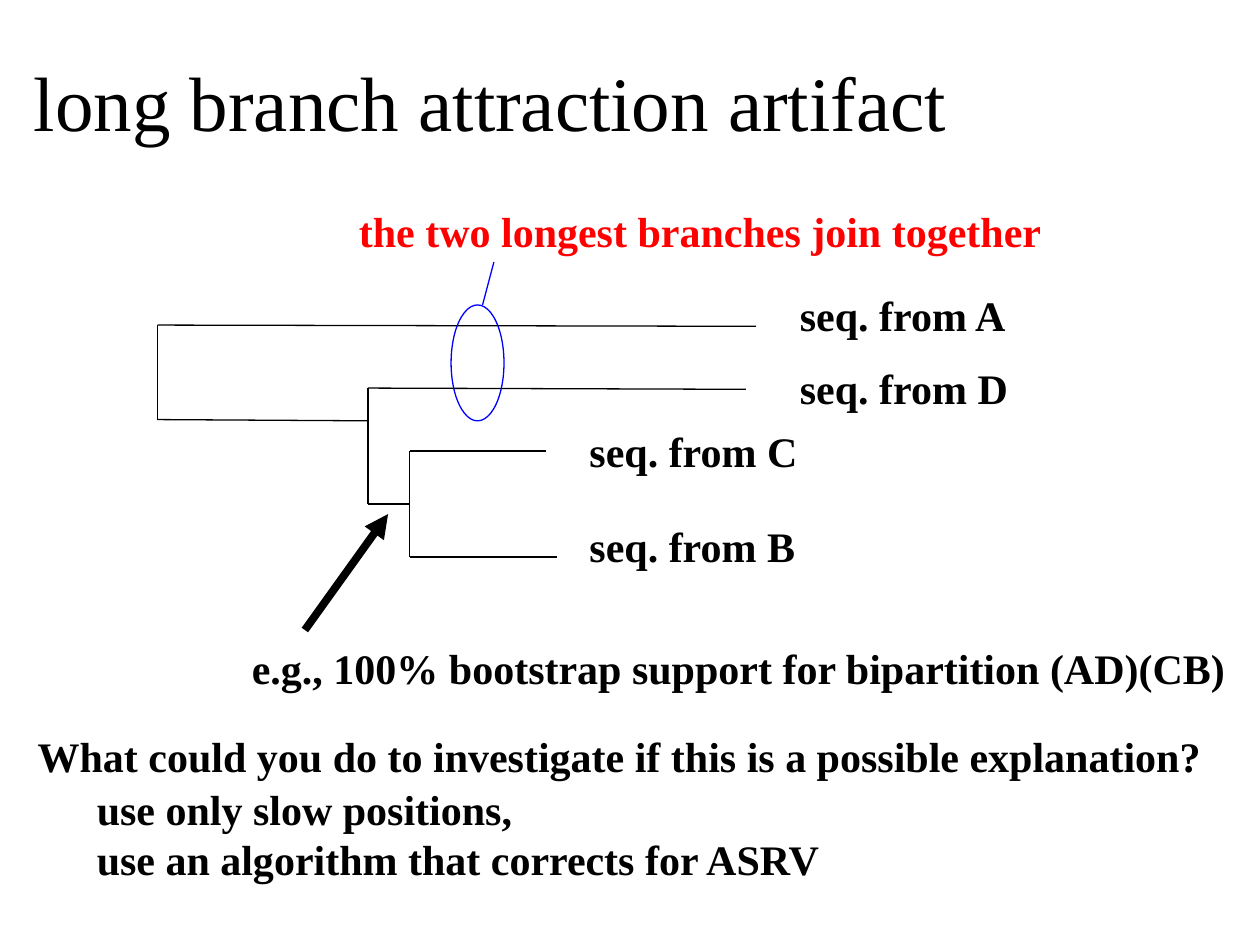
from pptx import Presentation
from pptx.dml.color import RGBColor
from pptx.enum.shapes import MSO_CONNECTOR, MSO_SHAPE
from pptx.enum.text import MSO_ANCHOR, MSO_AUTO_SIZE
from pptx.oxml.ns import qn
from pptx.util import Inches, Pt
from lxml import etree

BLACK = RGBColor(0, 0, 0)
RED = RGBColor(255, 0, 0)
BLUE = RGBColor(0, 0, 255)
FONT = "Times New Roman"
STRAIGHT = MSO_CONNECTOR.STRAIGHT
OVAL = MSO_SHAPE.OVAL
TOP = MSO_ANCHOR.TOP
MIDDLE = MSO_ANCHOR.MIDDLE
GROW = MSO_AUTO_SIZE.SHAPE_TO_FIT_TEXT
FIXED = MSO_AUTO_SIZE.NONE

ROOT, NODE, INNER = 1.25, 2.92, 3.25
BRANCHES = [
    (ROOT, 2.58, 6, 2.59),
    (ROOT, 2.58, ROOT, 3.33),
    (ROOT, 3.33, NODE, 3.34),
    (NODE, 3.08, NODE, 4),
    (NODE, 3.08, 5.92, 3.09),
    (NODE, 4, INNER, 4),
    (INNER, 3.58, INNER, 4.42),
    (INNER, 3.58, 4.33, 3.58),
    (INNER, 4.42, 4.42, 4.42),
]
LEAVES = [
    ("A", 6.25, 2.25, 1.89),
    ("D", 6.25, 2.83, 1.91),
    ("C", 4.58, 3.33, 1.91),
    ("B", 4.58, 4.08, 1.92),
]


def add_text(slide, text, box, size=24, bold=True, color=BLACK,
             anchor=TOP, wrap=False, fit=GROW):
    shape = slide.shapes.add_textbox(*map(Inches, box))
    frame = shape.text_frame
    frame.word_wrap = wrap
    frame.auto_size = fit
    frame.vertical_anchor = anchor
    frame.text = text
    for para in frame.paragraphs:
        font = para.font
        font.name = FONT
        font.size = Pt(size)
        font.bold = bold
        font.color.rgb = color


def add_line(slide, ends, color=BLACK, width=0.75, arrow=False):
    line = slide.shapes.add_connector(STRAIGHT, *map(Inches, ends))
    line.line.color.rgb = color
    line.line.width = Pt(width)
    if arrow:
        stroke = line.line._get_or_add_ln()
        etree.SubElement(stroke, qn("a:tailEnd"), type="triangle")
    etree.SubElement(line._element.spPr, qn("a:effectLst"))


def add_ring(slide, box, color):
    ring = slide.shapes.add_shape(OVAL, *map(Inches, box))
    ring.shadow.inherit = False
    ring.fill.background()
    ring.line.color.rgb = color
    ring.line.width = Pt(0.75)


def add_tree(slide):
    for ends in BRANCHES:
        add_line(slide, ends)
    for name, left, top, width in LEAVES:
        add_text(slide, f"seq. from {name}", (left, top, width, 0.5))


def add_notes(slide):
    add_line(slide, (2.42, 5, 3.08, 4.08), width=4.5, arrow=True)
    add_text(slide, "e.g., 100% bootstrap support for bipartition (AD)(CB)",
             (1.9, 5.05, 8, 0.51))
    add_ring(slide, (3.58, 2.42, 0.42, 0.92), BLUE)
    add_line(slide, (3.83, 2.42, 3.92, 2.08), color=BLUE)
    add_text(slide, "the two longest branches join together",
             (2.75, 1.58, 5.66, 0.51), color=RED)


def main():
    deck = Presentation()
    deck.slide_width = Inches(10)
    deck.slide_height = Inches(7.5)
    slide = deck.slides.add_slide(deck.slide_layouts[6])
    add_text(slide, "long branch attraction artifact",
             (0.17, 0.17, 8.5, 1.25), size=44, bold=False,
             anchor=MIDDLE, wrap=True, fit=FIXED)
    add_tree(slide)
    add_notes(slide)
    add_text(slide, "What could you do to investigate if this is "
             "a possible explanation?", (0.2, 5.75, 9.74, 0.5))
    add_text(slide, "use only slow positions,\n"
             "use an algorithm that corrects for ASRV",
             (0.67, 6.17, 6.13, 0.9))
    deck.save("out.pptx")


if __name__ == "__main__":
    main()
